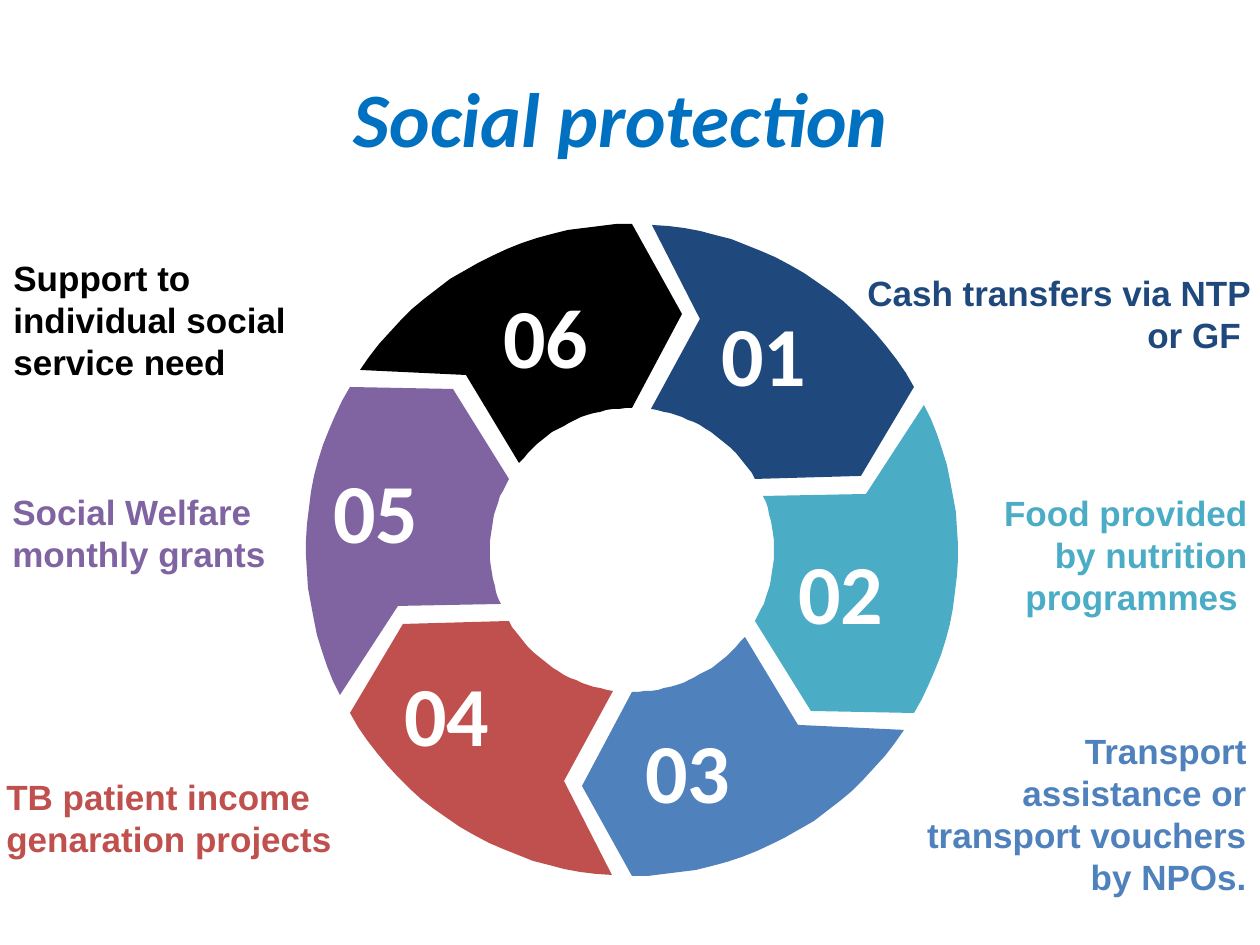
from math import cos, radians, sin

from pptx import Presentation
from pptx.dml.color import RGBColor
from pptx.enum.text import MSO_ANCHOR, MSO_AUTO_SIZE, PP_ALIGN
from pptx.util import Pt

PX = 914400 / 126
LEFT, CENTER, RIGHT = PP_ALIGN.LEFT, PP_ALIGN.CENTER, PP_ALIGN.RIGHT
MIDDLE, BOTTOM = MSO_ANCHOR.MIDDLE, MSO_ANCHOR.BOTTOM
GROW = MSO_AUTO_SIZE.SHAPE_TO_FIT_TEXT

COLORS = {
    "title": "0070C0", "white": "FFFFFF", "navy": "1F497D", "teal": "4BACC6",
    "blue": "4F81BD", "red": "C0504D", "purple": "8064A2", "black": "000000",
}

RING_X, RING_Y = 632, 550
OUTER, MIDDLE_RADIUS, INNER = 326, 241, 142
NUMBER_SIZE = (112, 115)

# color, number position, label box (left, top, width, height), alignment, label
STEPS = [
    ("navy", (708, 295), (840, 265, 423, 97), RIGHT,
     "Cash transfers via NTP or GF "),
    ("teal", (785, 533), (963, 484, 297, 140), RIGHT,
     "Food provided by nutrition programmes "),
    ("blue", (632, 712), (892, 721, 367, 183), RIGHT,
     "Transport assistance or transport vouchers by NPOs."),
    ("red", (391, 655), (-6, 769, 367, 97), LEFT,
     "TB patient income genaration projects"),
    ("purple", (320, 452), (0, 484, 289, 97), LEFT,
     "Social Welfare monthly grants"),
    ("black", (490, 277), (1, 249, 367, 140), LEFT,
     "Support to individual social service need"),
]


def px(length):
    return round(length * PX)


def rgb(name):
    return RGBColor.from_string(COLORS[name])


def ring_point(radius, angle):
    """Point on the ring; angles run clockwise in degrees from the top."""
    turn = radians(angle)
    return RING_X + radius * sin(turn), RING_Y - radius * cos(turn)


def arc(radius, start, end, steps=20):
    return [ring_point(radius, start + (end - start) * i / steps)
            for i in range(steps + 1)]


def add_ring_arrow(slide, start, color):
    """One sixth of the ring, notched at its start and pointed at its end."""
    points = arc(OUTER, start + 3.5, start + 60)
    points.append(ring_point(MIDDLE_RADIUS, start + 72))
    points += arc(INNER, start + 60, start + 7.6)
    points.append(ring_point(MIDDLE_RADIUS, start + 16.5))
    builder = slide.shapes.build_freeform(*points[0], scale=PX)
    builder.add_line_segments(points[1:], close=True)
    arrow = builder.convert_to_shape()
    arrow.shadow.inherit = False
    arrow.fill.solid()
    arrow.fill.fore_color.rgb = rgb(color)
    arrow.line.fill.background()


def add_text(slide, frame, text, font, size, color, align, anchor, wrap=True):
    box = slide.shapes.add_textbox(*map(px, frame))
    text_frame = box.text_frame
    text_frame.text = text
    text_frame.word_wrap = wrap
    text_frame.auto_size = GROW
    text_frame.vertical_anchor = anchor
    para = text_frame.paragraphs[0]
    para.alignment = align
    span = para.runs[0]
    span.font.name = font
    span.font.size = Pt(size)
    span.font.bold = True
    span.font.color.rgb = rgb(color)
    return box


def add_title(slide, text):
    box = add_text(slide, (63, 38, 1134, 157), text, "Calibri", 44, "title",
                   CENTER, MIDDLE)
    box.text_frame.auto_size = MSO_AUTO_SIZE.NONE
    box.text_frame.paragraphs[0].runs[0].font.italic = True


def main():
    deck = Presentation()
    deck.slide_width, deck.slide_height = px(1260), px(945)
    slide = deck.slides.add_slide(deck.slide_layouts[6])
    add_title(slide, "Social protection ")
    for index, (color, *_) in enumerate(STEPS):
        add_ring_arrow(slide, index * 60, color)
    for number, (color, corner, frame, align, label) in enumerate(STEPS, 1):
        add_text(slide, corner + NUMBER_SIZE, f"{number:02}", "Calibri", 48,
                 "white", CENTER, MIDDLE, wrap=False)
        add_text(slide, frame, label, "Arial", 20, color, align, BOTTOM)
    deck.save("out.pptx")


if __name__ == "__main__":
    main()
